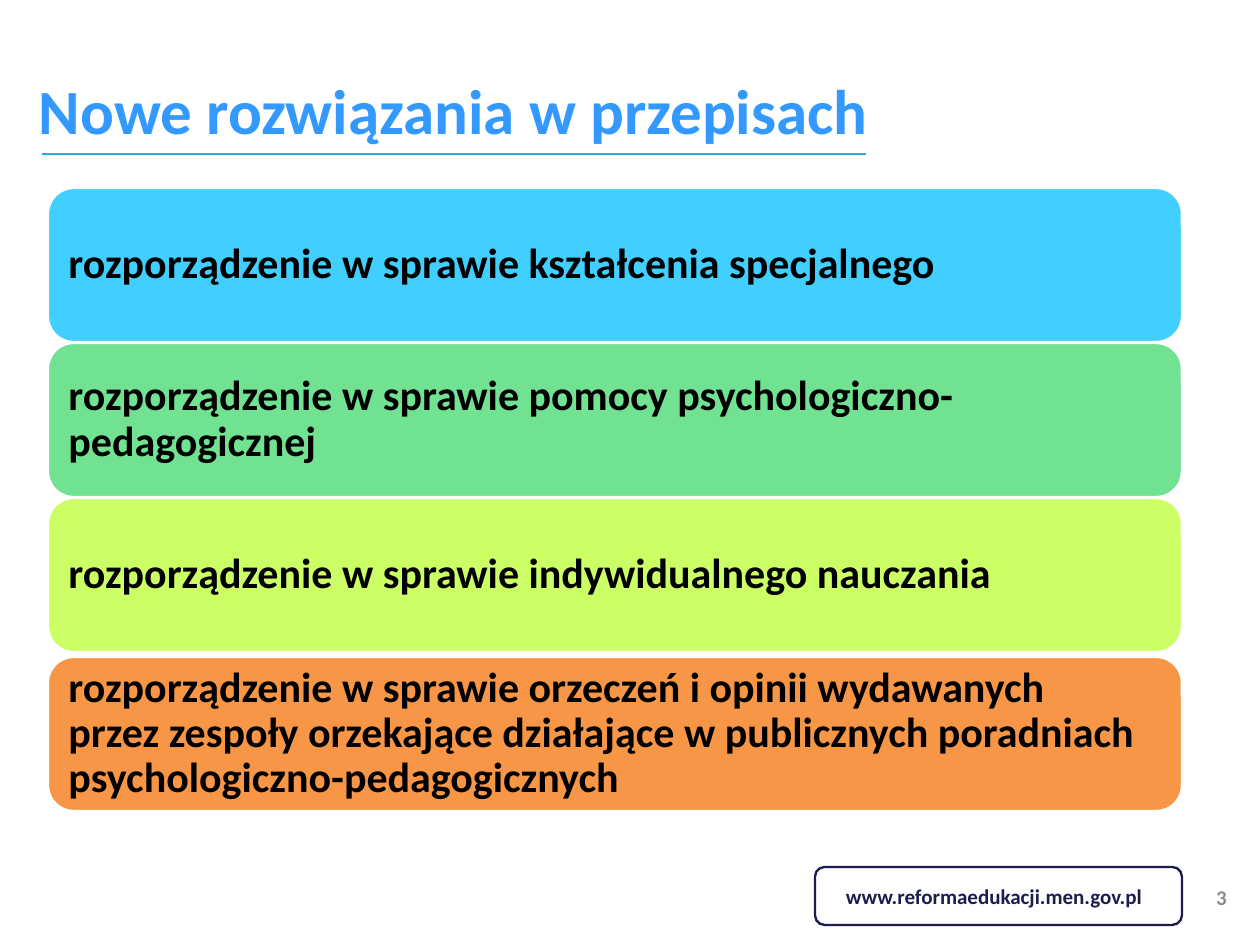
import pptx
import pptx.dml.color
import pptx.enum.shapes
import pptx.enum.text
import pptx.oxml.ns
import pptx.util
from lxml import etree

PX_PER_INCH = 84
FONT = "Calibri"
ALIGN = pptx.enum.text.PP_ALIGN
ANCHOR = pptx.enum.text.MSO_ANCHOR

# Regulations: text, fill, opacity in percent, top in px
REGULATIONS = [
    ("rozporządzenie w sprawie kształcenia specjalnego", "33CCFF", 93, 188),
    ("rozporządzenie w sprawie pomocy psychologiczno-pedagogicznej",
     "47D872", 77, 343),
    ("rozporządzenie w sprawie indywidualnego nauczania", "CCFF66", 100, 498),
    ("rozporządzenie w sprawie orzeczeń i opinii wydawanych\v"
     "przez zespoły orzekające działające w publicznych poradniach "
     "psychologiczno-pedagogicznych", "F79646", 100, 657),
]


def px(length):
    return pptx.util.Emu(round(length * 914400 / PX_PER_INCH))


def color(hex_value):
    return pptx.dml.color.RGBColor.from_string(hex_value)


def write(shape, text, size, text_color, margins, anchor=ANCHOR.MIDDLE,
          align=ALIGN.LEFT):
    """Fill a shape with one bold paragraph; margins are (sides, top and bottom)."""
    frame = shape.text_frame
    frame.word_wrap = True
    frame.auto_size = pptx.enum.text.MSO_AUTO_SIZE.NONE
    frame.vertical_anchor = anchor
    frame.margin_left = frame.margin_right = px(margins[0])
    frame.margin_top = frame.margin_bottom = px(margins[1])
    paragraph = frame.paragraphs[0]
    paragraph.text = text
    paragraph.alignment = align
    paragraph.font.name = FONT
    paragraph.font.size = pptx.util.Pt(size)
    paragraph.font.bold = True
    paragraph.font.color.rgb = color(text_color)
    return paragraph


def add_rounded_box(slide, left, top, width, height, line_color, fill=None,
                    opacity=100):
    box = slide.shapes.add_shape(
        pptx.enum.shapes.MSO_SHAPE.ROUNDED_RECTANGLE,
        px(left), px(top), px(width), px(height))
    box.shadow.inherit = False
    box.line.color.rgb = color(line_color)
    box.line.width = pptx.util.Pt(2)
    if fill is None:
        box.fill.background()
        return box
    box.fill.solid()
    box.fill.fore_color.rgb = color(fill)
    if opacity < 100:
        fill_color = box.fill._xPr.find(".//" + pptx.oxml.ns.qn("a:srgbClr"))
        etree.SubElement(fill_color, pptx.oxml.ns.qn("a:alpha"),
                         val=str(opacity * 1000))
    return box


def add_rule(slide, left, right, y, line_color):
    rule = slide.shapes.add_connector(
        pptx.enum.shapes.MSO_CONNECTOR.STRAIGHT,
        px(left), px(y), px(right), px(y))
    rule.line.color.rgb = color(line_color)
    rule.line.width = pptx.util.Pt(2.25)
    etree.SubElement(rule._element.spPr, pptx.oxml.ns.qn("a:effectLst"))


def add_title(slide, text):
    title = slide.shapes.title
    title.left, title.top = px(31), px(67)
    title.width, title.height = px(1093), px(85)
    write(title, text, 54, "3399FF", (8, 4), ANCHOR.TOP)


def main():
    presentation = pptx.Presentation()
    presentation.slide_width = px(1260)
    presentation.slide_height = px(945)
    slide = presentation.slides.add_slide(presentation.slide_layouts[5])

    # Footer: web address and page number
    address = add_rounded_box(slide, 815, 867, 367, 58, "1C1C4E")
    write(address, "www.reformaedukacji.men.gov.pl", 18, "1C1C4E", (28, 4))
    page_number = slide.shapes.add_textbox(px(1183), px(872), px(77), px(50))
    write(page_number, "3", 18, "8C8C8C", (13, 6), align=ALIGN.CENTER)

    # Heading
    add_rule(slide, 42, 866, 154, "25AAE1")
    add_title(slide, "Nowe rozwiązania w przepisach")

    # Stack of regulations
    for text, fill, opacity, top in REGULATIONS:
        bar = add_rounded_box(slide, 48, top, 1134, 154, "FFFFFF", fill, opacity)
        write(bar, text, 36, "000000", (13, 13)).line_spacing = 0.9

    presentation.save("out.pptx")


if __name__ == "__main__":
    main()
